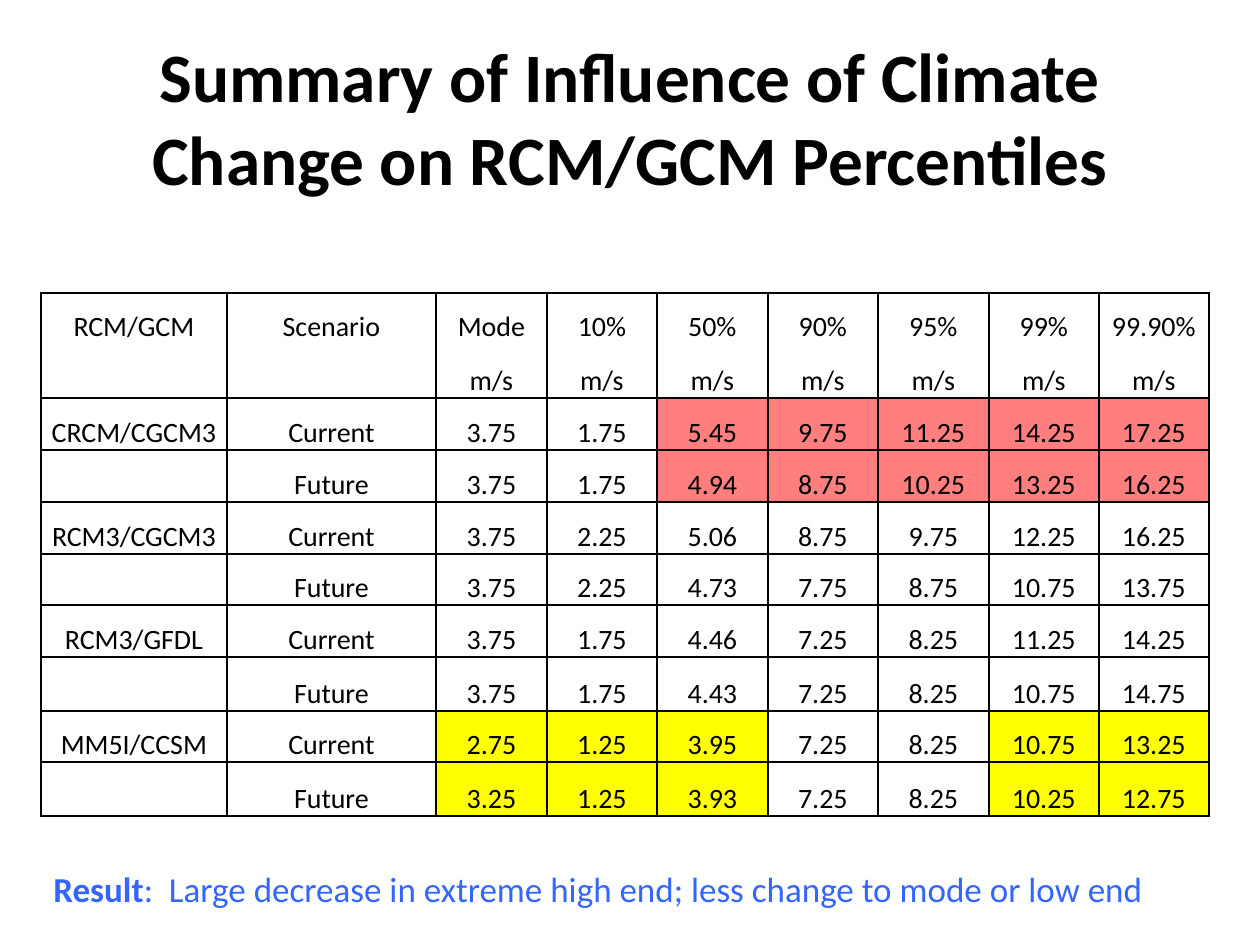
from lxml import etree
from pptx import Presentation
from pptx.dml.color import RGBColor
from pptx.enum.text import MSO_ANCHOR, MSO_AUTO_SIZE, PP_ALIGN
from pptx.oxml.ns import qn
from pptx.util import Pt

PX = 914400 // 126
MID = MSO_ANCHOR.MIDDLE
LOW = MSO_ANCHOR.BOTTOM
GROW = MSO_AUTO_SIZE.SHAPE_TO_FIT_TEXT
MID_X = PP_ALIGN.CENTER
NO_GRID = "{2D5ABB26-0587-4C30-8999-92F81FD0307C}"
INK = {"black": "000000", "red": "FF0000", "yellow": "FFFF00", "blue": "3366FF"}


def style(para, size, ink, bold=None):
    font = para.font
    font.name = "Calibri"
    font.size = Pt(size)
    font.bold = bold
    font.color.rgb = RGBColor.from_string(INK[ink])


def rule(cell, sides):
    props = cell._tc.get_or_add_tcPr()
    for spot, side in enumerate(sides):
        line = etree.Element(qn("a:ln" + side), w="12700")
        fill = etree.SubElement(line, qn("a:solidFill"))
        etree.SubElement(fill, qn("a:srgbClr"), val=INK["black"])
        props.insert(spot, line)


deck = Presentation()
deck.slide_width = 1260 * PX
deck.slide_height = 945 * PX
slide = deck.slides.add_slide(deck.slide_layouts[5])

title = slide.shapes.title
title.left, title.top, title.width, title.height = [
    n * PX for n in (63, 38, 1134, 157)]
title.text_frame.text = "Summary of Influence of Climate Change on RCM/GCM Percentiles"
title.text_frame.vertical_anchor = MID
head = title.text_frame.paragraphs[0]
head.alignment = MID_X
style(head, 39.6, "black", True)

rows = [
    ["RCM/GCM", "Scenario", "Mode", "10%", "50%", "90%", "95%", "99%", "99.90%"],
    ["", ""] + ["m/s"] * 7,
]
models = [
    ("CRCM/CGCM3", "3.75 1.75 5.45 9.75 11.25 14.25 17.25",
     "3.75 1.75 4.94 8.75 10.25 13.25 16.25"),
    ("RCM3/CGCM3", "3.75 2.25 5.06 8.75 9.75 12.25 16.25",
     "3.75 2.25 4.73 7.75 8.75 10.75 13.75"),
    ("RCM3/GFDL", "3.75 1.75 4.46 7.25 8.25 11.25 14.25",
     "3.75 1.75 4.43 7.25 8.25 10.75 14.75"),
    ("MM5I/CCSM", "2.75 1.25 3.95 7.25 8.25 10.75 13.25",
     "3.25 1.25 3.93 7.25 8.25 10.25 12.75"),
]
for model, now, later in models:
    rows.append([model, "Current"] + now.split())
    rows.append(["", "Future"] + later.split())

wide = [186, 209, 111, 110, 111, 110, 111, 110, 110]
tall = [51, 54, 52, 52, 52, 51, 52, 54, 51, 54]
marks = {1: ("red", {4, 5, 6, 7, 8}), 4: ("yellow", {2, 3, 4, 7, 8})}

frame = slide.shapes.add_table(
    len(rows), len(wide), 41 * PX, 293 * PX, sum(wide) * PX, sum(tall) * PX)
table = frame.table
table.first_row = False
table.horz_banding = False
table._tbl.tblPr.find(qn("a:tableStyleId")).text = NO_GRID
for col, width in zip(table.columns, wide):
    col.width = width * PX
for row, height in zip(table.rows, tall):
    row.height = height * PX

for r, row in enumerate(rows):
    tint, cols = marks.get(r // 2, ("", set()))
    for c, text in enumerate(row):
        cell = table.cell(r, c)
        cell.text = text
        cell.vertical_anchor = LOW
        cell.margin_left = cell.margin_right = 9 * PX
        cell.margin_top = cell.margin_bottom = 0
        para = cell.text_frame.paragraphs[0]
        para.alignment = MID_X
        para.line_spacing = 1.15
        style(para, 16, "black")
        if c in cols:
            cell.fill.solid()
            cell.fill.fore_color.rgb = RGBColor.from_string(INK[tint])
            if tint == "red":
                shade = cell._tc.tcPr.find(".//" + qn("a:srgbClr"))
                etree.SubElement(shade, qn("a:alpha"), val="50000")
        else:
            cell.fill.background()
        rule(cell, "LRB" if r % 2 else "LRT")

note = slide.shapes.add_textbox(41 * PX, 861 * PX, 1126 * PX, 55 * PX)
note.text_frame.word_wrap = False
note.text_frame.auto_size = GROW
para = note.text_frame.paragraphs[0]
style(para, 20, "blue")
lead = para.add_run()
lead.text = "Result"
lead.font.bold = True
para.add_run().text = ":  Large decrease in extreme high end; less change to mode or low end"

deck.save("out.pptx")
